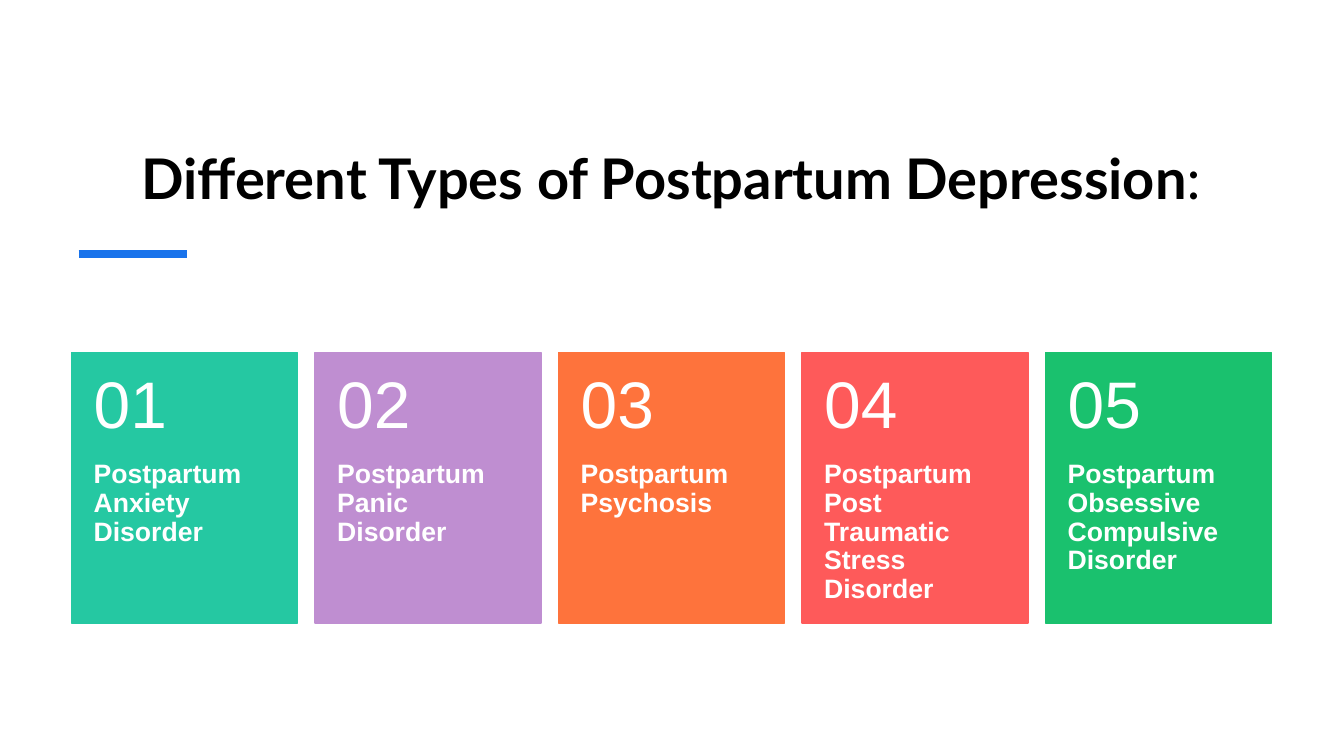
from lxml import etree
from pptx import Presentation
from pptx import util as u
from pptx.dml.color import RGBColor
from pptx.enum import shapes, text
from pptx.oxml.ns import qn

CARDS = [
    ("Postpartum Anxiety Disorder", "25C8A2"),
    ("Postpartum Panic Disorder", "BF8ED1"),
    ("Postpartum Psychosis", "FE733C"),
    ("Postpartum Post Traumatic Stress Disorder", "FE5A5A"),
    ("Postpartum Obsessive Compulsive Disorder", "1AC16E"),
]
CARD_LEFT, CARD_TOP, CARD_STEP = 0.71, 3.5, 2.415
CARD_WIDTH, NUMBER_HEIGHT, LABEL_HEIGHT = 2.24, 1.07, 1.61


def color(value):
    return RGBColor.from_string(value)


def add_span(para, words, size, font, ink, bold=False):
    span = para.add_run()
    span.text = words
    span.font.size = u.Pt(size)
    span.font.name = font
    span.font.bold = bold
    span.font.color.rgb = color(ink)


def add_title(page):
    title = page.shapes.title
    title.left, title.top = u.Inches(0.7), u.Inches(0.62)
    title.width, title.height = u.Inches(11.91), u.Inches(1.52)
    frame = title.text_frame
    frame.word_wrap = True
    frame.auto_size = text.MSO_AUTO_SIZE.NONE
    frame.vertical_anchor = text.MSO_ANCHOR.BOTTOM
    para = frame.paragraphs[0]
    para.alignment = text.PP_ALIGN.CENTER
    add_span(para, "Different Types of Postpartum Depression", 40, "Lato", "000000", True)
    add_span(para, ":", 40, "Lato", "000000")


def add_accent(page):
    y = u.Inches(2.52)
    accent = page.shapes.add_connector(
        shapes.MSO_CONNECTOR.STRAIGHT, u.Inches(0.78), y, u.Inches(1.85), y)
    accent.line.color.rgb = color("1973EB")
    accent.line.width = u.Pt(6)
    etree.SubElement(accent._element.spPr, qn("a:effectLst"))


def add_text(group, left, top, height, words, size, bold, anchor, inset_top, inset_bottom):
    box = group.shapes.add_textbox(
        u.Inches(left), u.Inches(top), u.Inches(CARD_WIDTH), u.Inches(height))
    frame = box.text_frame
    frame.word_wrap = True
    frame.vertical_anchor = anchor
    frame.margin_left = frame.margin_right = u.Inches(0.22)
    frame.margin_top, frame.margin_bottom = u.Inches(inset_top), u.Inches(inset_bottom)
    para = frame.paragraphs[0]
    para.line_spacing = 0.9
    add_span(para, words, size, "Arial", "FFFFFF", bold)


def add_card(page, index, label, fill):
    left = CARD_LEFT + index * CARD_STEP
    label_top = CARD_TOP + NUMBER_HEIGHT
    group = page.shapes.add_group_shape()
    panel = group.shapes.add_shape(
        shapes.MSO_SHAPE.RECTANGLE, u.Inches(left), u.Inches(CARD_TOP),
        u.Inches(CARD_WIDTH), u.Inches(NUMBER_HEIGHT + LABEL_HEIGHT))
    panel.shadow.inherit = False
    panel.fill.solid()
    panel.fill.fore_color.rgb = color(fill)
    panel.line.color.rgb = color(fill)
    panel.line.width = u.Pt(1)
    add_text(group, left, label_top, LABEL_HEIGHT, label, 19, True,
             text.MSO_ANCHOR.TOP, 0, 0.36)
    add_text(group, left, CARD_TOP, NUMBER_HEIGHT, f"{index + 1:02}", 47, False,
             text.MSO_ANCHOR.MIDDLE, 0.18, 0.18)


def main():
    deck = Presentation()
    deck.slide_width, deck.slide_height = u.Inches(13.33), u.Inches(7.5)
    page = deck.slides.add_slide(deck.slide_layouts[5])
    page.background.fill.solid()
    page.background.fill.fore_color.rgb = color("FFFFFF")
    add_title(page)
    add_accent(page)
    for index, (label, fill) in enumerate(CARDS):
        add_card(page, index, label, fill)
    deck.save("out.pptx")


if __name__ == "__main__":
    main()
